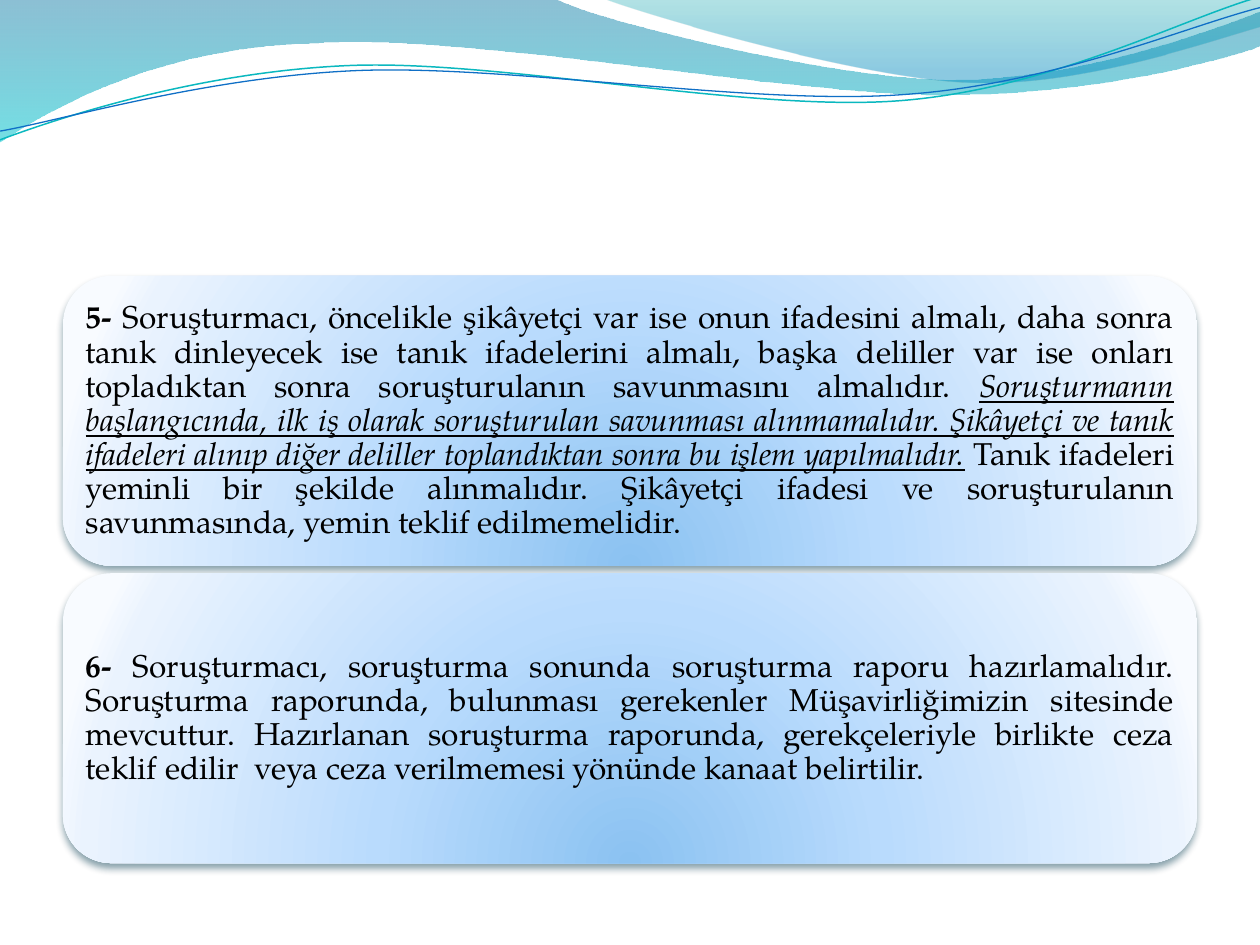
"""Builds a slide with a wave header and two rounded text panels."""
import math

import pptx
import pptx.dml.color
import pptx.enum.shapes
import pptx.enum.text
import pptx.oxml
import pptx.oxml.ns
import pptx.util

RGB = pptx.dml.color.RGBColor
BLACK = RGB(0x00, 0x00, 0x00)
TEAL = RGB(0x0A, 0xB8, 0xBF)
BLUE = RGB(0x0F, 0x6F, 0xC6)
SHADOW = RGB(0x00, 0x37, 0x4C)
LEFT_WAVE = [(0, RGB(0x00, 0x74, 0xA1), 45), (100, RGB(0x00, 0xC6, 0xCF), 55)]
RIGHT_WAVE = [(0, RGB(0x00, 0xA1, 0xA9), 30), (80, RGB(0x00, 0x8B, 0xBF), 45)]
PANEL = [(0, RGB(0x8B, 0xC2, 0xF1), 100), (43, RGB(0xB9, 0xDB, 0xFD), 100),
         (93, RGB(0xEA, 0xF3, 0xFE), 100), (100, RGB(0xF8, 0xFB, 0xFF), 100)]
DOWN = '<a:lin ang="5400000" scaled="1"/>'
RADIAL = ('<a:path path="circle"><a:fillToRect l="50000" t="130000" '
          'r="50000" b="-30000"/></a:path>')
NS = pptx.oxml.ns.nsdecls("a")
PX = 9144
TILT = -2.7

LEFT_OUTLINE = [
    [(0, 0)], [(440, -1)], [(476, 17), (664, 63), (758, 63)],
    [(853, 63), (958, 26), (1000, 9)], [(1001, 36)],
    [(983, 44), (870, 76), (746, 75)], [(622, 75), (382, 28), (257, 34)],
    [(129, 36), (46, 83), (-1, 113)], [(0, 0)]]
RIGHT_OUTLINE = [
    [(479, -1)], [(509, 11), (682, 62), (769, 65)],
    [(856, 69), (961, 32), (1000, 21)], [(1000, 0)], [(479, -1)]]
TEAL_CURVE = [
    [(0, 111)], [(48, 93), (158, 57), (277, 52)],
    [(395, 47), (593, 89), (713, 80)], [(833, 71), (938, 15), (998, -2)]]
BLUE_CURVE = [
    [(0, 104)], [(47, 96), (164, 61), (283, 56)],
    [(403, 51), (597, 84), (717, 75)], [(836, 67), (941, 21), (1000, 6)]]

BOLD = {"bold": True}
STRESSED = {"italic": True, "underline": True}
PANELS = [
    [("5-", BOLD),
     (" Soruşturmacı, öncelikle şikâyetçi var ise onun ifadesini almalı, daha "
      "sonra tanık dinleyecek ise tanık ifadelerini almalı, başka deliller var "
      "ise onları topladıktan sonra soruşturulanın savunmasını almalıdır. ", {}),
     ("Soruşturmanın başlangıcında, ilk iş olarak soruşturulan savunması "
      "alınmamalıdır. Şikâyetçi ve tanık ifadeleri alınıp diğer deliller "
      "toplandıktan sonra bu işlem yapılmalıdır.", STRESSED),
     (" Tanık ifadeleri yeminli bir şekilde alınmalıdır. Şikâyetçi ifadesi ve "
      "soruşturulanın savunmasında, yemin teklif edilmemelidir.", {})],
    [("6-", BOLD),
     (" Soruşturmacı, soruşturma sonunda soruşturma raporu hazırlamalıdır. "
      "Soruşturma raporunda, bulunması gerekenler Müşavirliğimizin sitesinde "
      "mevcuttur. Hazırlanan soruşturma raporunda, gerekçeleriyle birlikte ceza "
      "teklif edilir  veya ceza verilmemesi yönünde kanaat belirtilir.", {})],
]


def turn(point, center, degrees):
    cos, sin = math.cos(math.radians(degrees)), math.sin(math.radians(degrees))
    dx, dy = point[0] - center[0], point[1] - center[1]
    return center[0] + dx * cos - dy * sin, center[1] + dx * sin + dy * cos


class Deck:
    def __init__(self, width, height):
        self.prs = pptx.Presentation()
        self.prs.slide_width, self.prs.slide_height = width * PX, height * PX
        self.s = self.prs.slides.add_slide(self.prs.slide_layouts[6])
        self.font = {"name": "TeX Gyre Pagella", "size": pptx.util.Pt(18)}

    def gradient(self, sp, stops, direction):
        sp.fill.background()
        gs = "".join(
            f'<a:gs pos="{pos * 1000}"><a:srgbClr val="{color}">'
            f'<a:alpha val="{alpha * 1000}"/></a:srgbClr></a:gs>'
            for pos, color, alpha in stops)
        fill = pptx.oxml.parse_xml(
            f'<a:gradFill {NS} rotWithShape="1"><a:gsLst>{gs}</a:gsLst>'
            f'{direction}</a:gradFill>')
        props = sp._element.spPr
        props.replace(props.find(pptx.oxml.ns.qn("a:noFill")), fill)
        sp.line.fill.background()

    def outline(self, segments, close):
        points = [(round(x * PX), round(y * PX))
                  for segment in segments for x, y in segment]
        builder = self.s.shapes.build_freeform(*points[0], scale=1.0)
        builder.add_line_segments(points[1:], close=close)
        sp = builder.convert_to_shape()
        sp.shadow.inherit = False
        lines = iter(list(sp._element.iter(pptx.oxml.ns.qn("a:lnTo"))))
        for segment in segments[1:]:
            group = [next(lines) for _ in segment]
            if len(group) == 3:
                bezier = pptx.oxml.parse_xml(f"<a:cubicBezTo {NS}/>")
                group[0].addprevious(bezier)
                for line in group:
                    bezier.append(line[0])
                    line.getparent().remove(line)
        return sp

    def wave(self, segments, stops):
        self.gradient(self.outline(segments, True), stops, DOWN)

    def curve(self, segments, center, color, width):
        level = [[turn(point, center, -TILT) for point in segment]
                 for segment in segments]
        sp = self.outline(level, False)
        sp.rotation = TILT
        sp.fill.background()
        sp.line.color.rgb = color
        sp.line.width = pptx.util.Pt(width)

    def panel(self, x, y, w, h):
        sp = self.s.shapes.add_shape(
            pptx.enum.shapes.MSO_SHAPE.ROUNDED_RECTANGLE,
            x * PX, y * PX, w * PX, h * PX)
        self.gradient(sp, PANEL, RADIAL)
        sp.shadow.inherit = False
        effects = sp._element.spPr.find(pptx.oxml.ns.qn("a:effectLst"))
        effects.append(pptx.oxml.parse_xml(
            f'<a:outerShdw {NS} blurRad="57150" dist="38100" dir="5400000" '
            f'rotWithShape="0"><a:srgbClr val="{SHADOW}">'
            f'<a:alpha val="48000"/></a:srgbClr></a:outerShdw>'))

    def text(self, x, y, w, h, runs):
        tf = self.s.shapes.add_textbox(x * PX, y * PX, w * PX, h * PX).text_frame
        frame = {f"margin_{side}": 7 * PX
                 for side in ("left", "top", "right", "bottom")}
        frame["word_wrap"] = True
        frame["vertical_anchor"] = pptx.enum.text.MSO_ANCHOR.MIDDLE
        for key, value in frame.items():
            setattr(tf, key, value)
        p = tf.paragraphs[0]
        p.alignment = pptx.enum.text.PP_ALIGN.JUSTIFY
        p.line_spacing = 0.9
        for text, style in runs:
            r = p.add_run()
            r.text = text
            for key, value in {**self.font, **style}.items():
                setattr(r.font, key, value)
            r.font.color.rgb = BLACK


def main():
    deck = Deck(1000, 750)
    deck.wave(LEFT_OUTLINE, LEFT_WAVE)
    deck.wave(RIGHT_OUTLINE, RIGHT_WAVE)
    deck.curve(TEAL_CURVE, (499, 58), TEAL, 0.85)
    deck.curve(BLUE_CURVE, (499, 59), BLUE, 0.75)
    for i, runs in enumerate(PANELS):
        top = 219 + i * 236
        deck.panel(50, top, 900, 230)
        deck.text(61, top + 11, 878, 208, runs)
    deck.prs.save("out.pptx")


if __name__ == "__main__":
    main()
